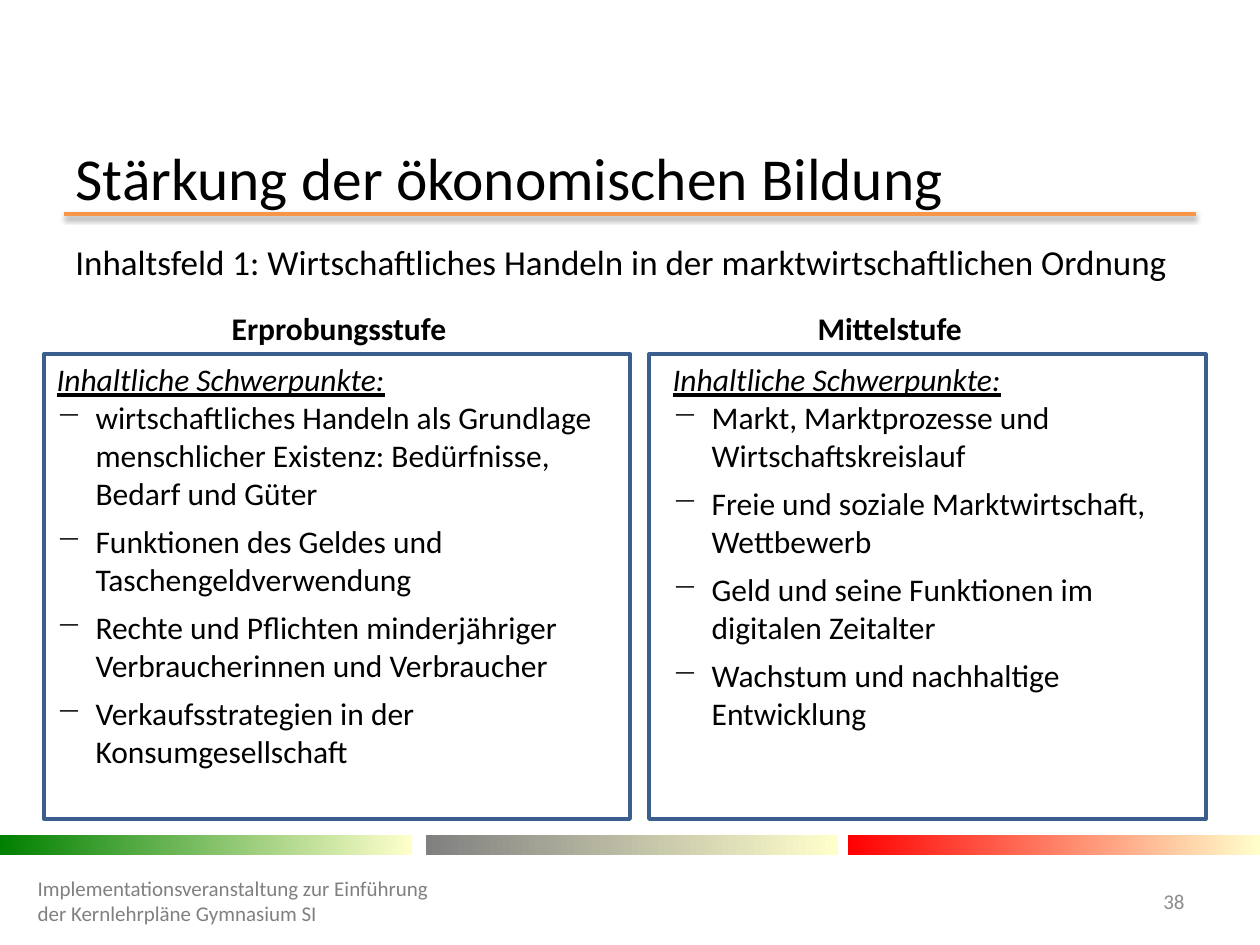
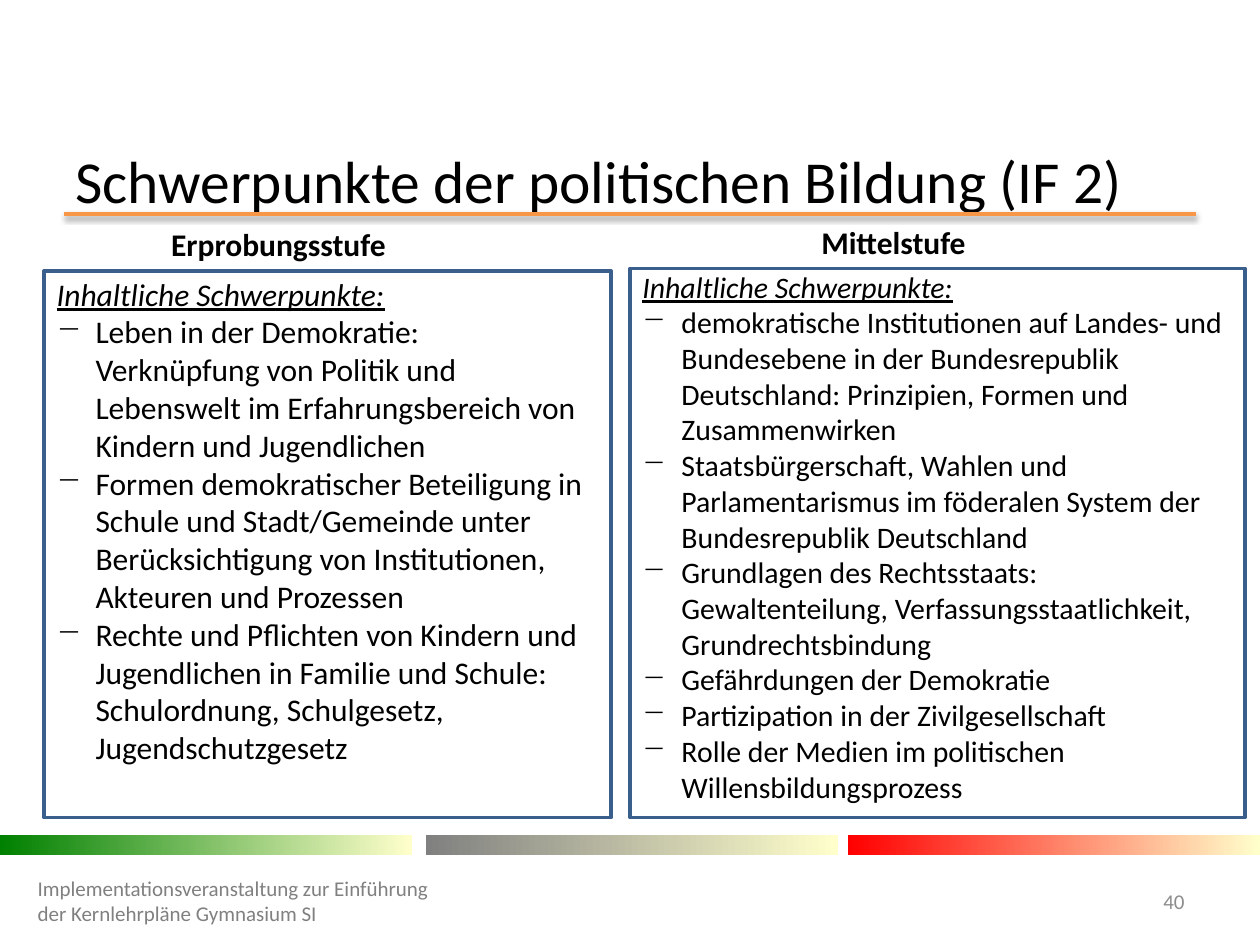
from lxml import etree
from pptx import Presentation, util as u
from pptx.dml.color import RGBColor
from pptx.enum import shapes, text
from pptx.oxml.ns import qn

# Content: boxes are (left, top, width, height) in inches
SLIDES = [
    {
        "title": "Stärkung der ökonomischen Bildung",
        "title_top": 1.21,
        "subtitle": "Inhaltsfeld 1: Wirtschaftliches Handeln in der marktwirtschaftlichen Ordnung",
        "number": "38",
        "gap": 6,
        "columns": [
            {
                "stage": "Erprobungsstufe", "stage_box": (1.74, 2.4, 1.92, 0.4),
                "frame": (0.35, 2.81, 4.65, 3.69), "text_box": (0.35, 2.81, 4.49, 3.38), "size": 18,
                "points": [
                    "wirtschaftliches Handeln als Grundlage menschlicher Existenz: Bedürfnisse, Bedarf und Güter",
                    "Funktionen des Geldes und Taschengeldverwendung",
                    "Rechte und Pflichten minderjähriger Verbraucherinnen und Verbraucher",
                    "Verkaufsstrategien in der Konsumgesellschaft",
                ],
            },
            {
                "stage": "Mittelstufe", "stage_box": (6.39, 2.4, 1.36, 0.4),
                "frame": (5.15, 2.81, 4.42, 3.69), "text_box": (5.24, 2.81, 4.17, 3.47), "size": 18,
                "points": [
                    "Markt, Marktprozesse und Wirtschaftskreislauf",
                    "Freie und soziale Marktwirtschaft, Wettbewerb",
                    "Geld und seine Funktionen im digitalen Zeitalter",
                    "Wachstum und nachhaltige Entwicklung",
                ],
            },
        ],
    },
    {
        "title": "Schwerpunkte der politischen Bildung (IF 2)",
        "title_top": 1.23,
        "subtitle": None,
        "number": "40",
        "gap": 0,
        "columns": [
            {
                "stage": "Erprobungsstufe", "stage_box": (1.26, 1.74, 1.92, 0.4),
                "frame": (0.35, 2.15, 4.5, 4.34), "text_box": (0.35, 2.13, 4.41, 4.34), "size": 18,
                "points": [
                    "Leben in der Demokratie: Verknüpfung von Politik und Lebenswelt im "
                    "Erfahrungsbereich von Kindern und Jugendlichen",
                    "Formen demokratischer Beteiligung in Schule und Stadt/Gemeinde unter "
                    "Berücksichtigung von Institutionen, Akteuren und Prozessen",
                    "Rechte und Pflichten von Kindern und Jugendlichen in Familie und Schule: "
                    "Schulordnung, Schulgesetz, Jugendschutzgesetz",
                ],
            },
            {
                "stage": "Mittelstufe", "stage_box": (6.42, 1.72, 1.36, 0.4),
                "frame": (5, 2.13, 4.88, 4.36), "text_box": (5, 2.08, 4.99, 4.39), "size": 17,
                "points": [
                    "demokratische Institutionen auf Landes- und Bundesebene in der "
                    "Bundesrepublik Deutschland: Prinzipien, Formen und Zusammenwirken",
                    "Staatsbürgerschaft, Wahlen und Parlamentarismus im föderalen System "
                    "der Bundesrepublik Deutschland",
                    "Grundlagen des Rechtsstaats: Gewaltenteilung, "
                    "Verfassungsstaatlichkeit, Grundrechtsbindung",
                    "Gefährdungen der Demokratie",
                    "Partizipation in der Zivilgesellschaft",
                    "Rolle der Medien im politischen Willensbildungsprozess",
                ],
            },
        ],
    },
]
FOCUS = "Inhaltliche Schwerpunkte:"
FOOTER = "Implementationsveranstaltung zur Einführung der Kernlehrpläne Gymnasium SI"

# Shared style
FONT = "Calibri"
BLACK, WHITE, ORANGE, BLUE = "000000", "FFFFFF", "F79646", "3A5F8C"
FOOTER_GREY, NUMBER_GREY = "808080", "8C8C8C"
BANDS = [(0, "008000"), (3.38, "808080"), (6.73, "FF0000")]
BAND_END = "FFFFCC"
INDENT = u.Inches(0.31)


def color(value):
    return RGBColor.from_string(value)


def inches(box):
    return [u.Inches(length) for length in box]


def style(para, size, fill=BLACK, bold=False, italic=False, underline=False):
    font = para.font
    font.name, font.size, font.bold = FONT, u.Pt(size), bold
    font.italic, font.underline = italic, underline
    font.color.rgb = color(fill)


def add_text(page, box, words, size, fill=BLACK, bold=False, wrap=True,
             anchor=text.MSO_ANCHOR.TOP, align=text.PP_ALIGN.LEFT):
    label = page.shapes.add_textbox(*inches(box))
    frame = label.text_frame
    frame.word_wrap, frame.vertical_anchor = wrap, anchor
    para = frame.paragraphs[0]
    para.text, para.alignment = words, align
    style(para, size, fill, bold)
    return label


def add_rectangle(page, box):
    rectangle = page.shapes.add_shape(shapes.MSO_SHAPE.RECTANGLE, *inches(box))
    rectangle.shadow.inherit = False
    return rectangle


def add_title_line(page):
    line = page.shapes.add_connector(
        shapes.MSO_CONNECTOR.STRAIGHT, *inches((0.51, 1.7, 9.49, 1.7)))
    line.line.color.rgb = color(ORANGE)
    line.line.width = u.Pt(2)
    effects = etree.SubElement(line._element.spPr, qn("a:effectLst"))
    shadow = etree.SubElement(effects, qn("a:outerShdw"), blurRad=str(u.Pt(3.1)),
                              dist=str(u.Pt(1.6)), dir="5400000", rotWithShape="0")
    tone = etree.SubElement(shadow, qn("a:srgbClr"), val=BLACK)
    etree.SubElement(tone, qn("a:alpha"), val="38000")


def add_bands(page):
    for left, start in BANDS:
        band = add_rectangle(page, (left, 6.63, 3.27, 0.16))
        band.line.fill.background()
        band.fill.gradient()
        band.fill.gradient_angle = 0
        for stop, tone, position in zip(band.fill.gradient_stops, (start, BAND_END), (0, 1)):
            stop.color.rgb = color(tone)
            stop.position = position


def set_title(page, words, top):
    title = page.shapes.title
    title.left, title.top, title.width, title.height = inches((0.5, top, 9, 0.39))
    frame = title.text_frame
    frame.auto_size, frame.word_wrap = text.MSO_AUTO_SIZE.NONE, True
    frame.vertical_anchor = text.MSO_ANCHOR.MIDDLE
    para = frame.paragraphs[0]
    para.text, para.alignment = words, text.PP_ALIGN.LEFT
    style(para, 34)


def add_column(page, column, gap):
    size = column["size"]
    # Focus heading and its dashed points
    box = add_text(page, column["text_box"], FOCUS, size)
    style(box.text_frame.paragraphs[0], size, italic=True, underline=True)
    for point in column["points"]:
        para = box.text_frame.add_paragraph()
        para.text = point
        para.space_after = u.Pt(gap)
        properties = para._p.get_or_add_pPr()
        properties.set("marL", str(INDENT))
        properties.set("indent", str(-INDENT))
        etree.SubElement(properties, qn("a:buChar"), char="−")
        style(para, size)
    # Frame and stage name
    frame = add_rectangle(page, column["frame"])
    frame.fill.background()
    frame.line.color.rgb = color(BLUE)
    frame.line.width = u.Pt(2)
    add_text(page, column["stage_box"], column["stage"], 18, bold=True, wrap=False)


def add_page(deck, content):
    page = deck.slides.add_slide(deck.slide_layouts[5])
    add_title_line(page)
    add_bands(page)
    set_title(page, content["title"], content["title_top"])
    middle = text.MSO_ANCHOR.MIDDLE
    add_text(page, (0.2, 6.95, 3.31, 0.4), FOOTER, 12, FOOTER_GREY, anchor=middle)
    add_text(page, (8.86, 6.95, 0.64, 0.4), content["number"], 12, NUMBER_GREY,
             anchor=middle, align=text.PP_ALIGN.RIGHT)
    for column in content["columns"]:
        add_column(page, column, content["gap"])
    if content["subtitle"]:
        subtitle = add_text(page, (0.5, 1.86, 9, 0.43), content["subtitle"], 20)
        subtitle.fill.solid()
        subtitle.fill.fore_color.rgb = color(WHITE)


def main():
    deck = Presentation()
    deck.slide_width, deck.slide_height = u.Inches(10), u.Inches(7.5)
    for content in SLIDES:
        add_page(deck, content)
    deck.save("out.pptx")


if __name__ == "__main__":
    main()
